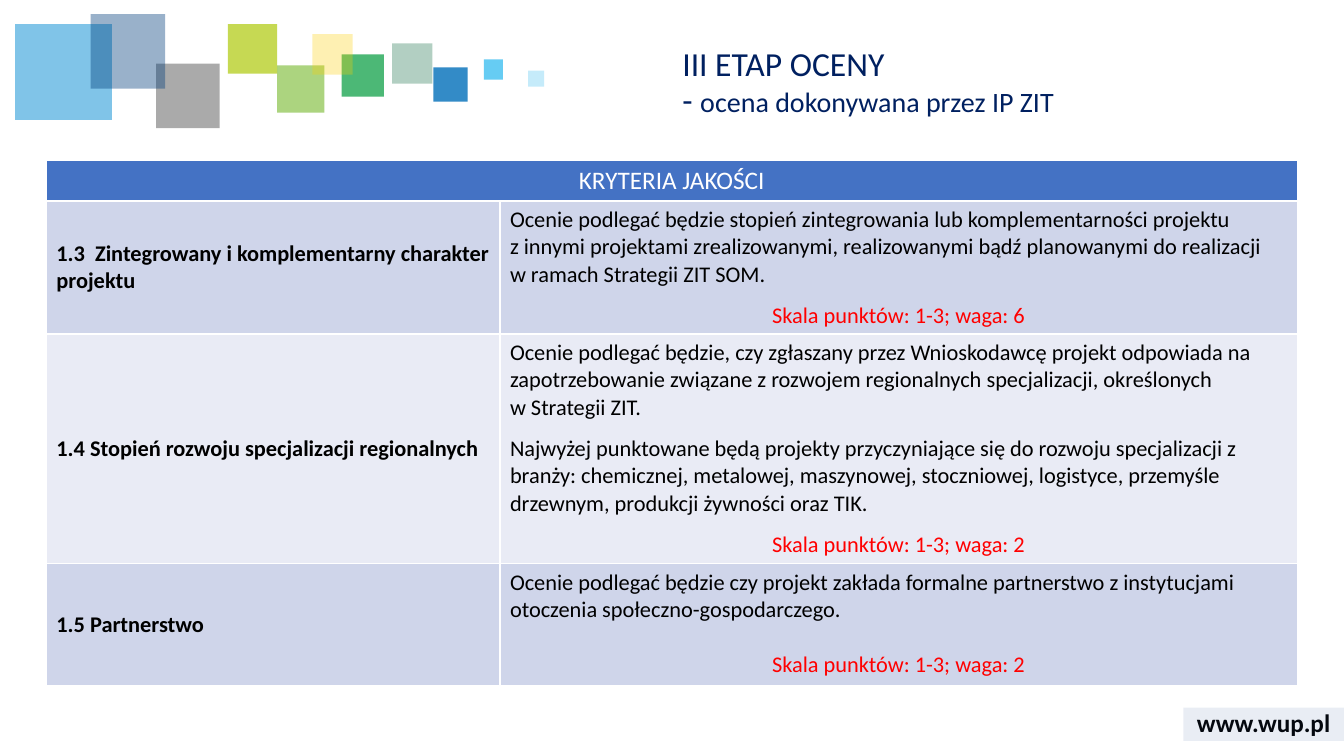
"""Build the slide with the quality criteria of the third assessment stage."""
from lxml import etree
from pptx import Presentation
from pptx.dml.color import RGBColor
from pptx.enum.shapes import MSO_SHAPE
from pptx.enum.text import MSO_ANCHOR as ANCHOR, MSO_AUTO_SIZE as AUTO, PP_ALIGN as ALIGN
from pptx.oxml.ns import qn
from pptx.util import Pt

FONT = "Calibri"
TITLE = [("III ETAP OCENY", 24), ("- ", 24), ("ocena dokonywana przez IP ZIT", 20)]
SITE = "www.wup.pl"
HEADER = "KRYTERIA JAKOŚCI"

# left, top, width, height, colour, opacity in percent
SQUARES = [
    (280.1, 31, 28.8, 28.8, "006138", 30),
    (309.6, 48.2, 24.5, 24.5, "006EB9", 80),
    (244.1, 38.9, 30.2, 30.2, "009A3C", 70),
    (10.8, 17.3, 69.1, 68.4, "028BD3", 50),
    (198, 46.8, 33.8, 33.8, "75B82A", 60),
    (111.6, 45.4, 45.4, 46.1, "575757", 50),
    (64.8, 10.1, 53.3, 53.3, "003D7C", 40),
    (345.6, 42.5, 13.7, 14.4, "40C0F1", 80),
    (162.7, 17.3, 35.3, 35.3, "AFCA0B", 70),
    (223.2, 24.5, 28.8, 28.8, "FED000", 30),
    (377.3, 50.4, 11.5, 11.5, "40C0F1", 30),
]
SITE_BAND = (845.3, 505.4, 114.7, 23.8, "2F5597", 10)

# name, description blocks of lines, score, gap before score, alignment, row height, fill
CRITERIA = [
    ("1.3  Zintegrowany i komplementarny charakter projektu",
     [["Ocenie podlegać będzie stopień zintegrowania lub komplementarności projektu",
       "z innymi projektami zrealizowanymi, realizowanymi bądź planowanymi do realizacji",
       "w ramach Strategii ZIT SOM."]],
     "Skala punktów: 1-3; waga: 6", 9.8, ALIGN.JUSTIFY, 95, "CFD5EA"),
    ("1.4 Stopień rozwoju specjalizacji regionalnych",
     [["Ocenie podlegać będzie, czy zgłaszany przez Wnioskodawcę projekt odpowiada na",
       "zapotrzebowanie związane z rozwojem regionalnych specjalizacji, określonych",
       "w Strategii ZIT."],
      ["Najwyżej punktowane będą projekty przyczyniające się do rozwoju specjalizacji "
       "z branży: chemicznej, metalowej, maszynowej, stoczniowej, logistyce, przemyśle "
       "drzewnym, produkcji żywności oraz TIK."]],
     "Skala punktów: 1-3; waga: 2", 9.8, ALIGN.LEFT, 164, "E9EBF5"),
    ("1.5 Partnerstwo",
     [["Ocenie podlegać będzie czy projekt zakłada formalne partnerstwo z instytucjami",
       "otoczenia społeczno-gospodarczego."]],
     "Skala punktów: 1-3; waga: 2", 19.5, ALIGN.LEFT, 87.2, "CFD5EA"),
]
COLUMNS = (324, 569.5)
HEADER_HEIGHT = 28.8
BLOCK_GAP = 9.8


def rgb(color):
    return RGBColor.from_string(color)


def style(p, size, color, align=ALIGN.LEFT, bold=False, before=0):
    p.alignment = align
    p.space_before = Pt(before)
    p.font.name = FONT
    p.font.size = Pt(size)
    p.font.bold = bold
    p.font.color.rgb = rgb(color)


def add_rect(s, left, top, width, height, color, opacity):
    sp = s.shapes.add_shape(MSO_SHAPE.RECTANGLE, Pt(left), Pt(top), Pt(width), Pt(height))
    sp.shadow.inherit = False
    sp.line.fill.background()
    sp.fill.solid()
    sp.fill.fore_color.rgb = rgb(color)
    clr = sp.fill._xPr.find(qn("a:solidFill"))[0]
    etree.SubElement(clr, qn("a:alpha"), val=str(opacity * 1000))


def fill_cell(cell, color, paragraphs, anchor=ANCHOR.TOP):
    cell.fill.solid()
    cell.fill.fore_color.rgb = rgb(color)
    cell.vertical_anchor = anchor
    tf = cell.text_frame
    for i, (text, *look) in enumerate(paragraphs):
        p = tf.add_paragraph() if i else tf.paragraphs[0]
        p.text = text
        style(p, *look)


def description(blocks, score, gap, align):
    for b, lines in enumerate(blocks):
        for i, line in enumerate(lines):
            yield line, 16, "000000", align, False, BLOCK_GAP if b and not i else 0
    yield score, 16, "FF0000", ALIGN.CENTER, False, gap


def add_site(s):
    sp = s.shapes.add_textbox(Pt(845.3), Pt(501.8), Pt(114.7), Pt(28.8))
    tf = sp.text_frame
    tf.word_wrap = True
    tf.vertical_anchor = ANCHOR.MIDDLE
    p = tf.paragraphs[0]
    p.text = SITE
    style(p, 18, "000000", ALIGN.CENTER, True)


def add_title(s):
    sp = s.shapes.title
    sp.left, sp.top, sp.width, sp.height = Pt(480.2), Pt(30.2), Pt(457.9), Pt(39.6)
    tf = sp.text_frame
    tf.word_wrap = True
    tf.auto_size = AUTO.NONE
    tf.vertical_anchor = ANCHOR.TOP
    p = tf.paragraphs[0]
    style(p, 24, "002060")
    p.line_spacing = 0.9
    for i, (text, size) in enumerate(TITLE):
        if i == 1:
            p.add_line_break()
        r = p.add_run()
        r.text = text
        r.font.size = Pt(size)


def add_criteria(s):
    heights = [HEADER_HEIGHT] + [c[5] for c in CRITERIA]
    table = s.shapes.add_table(len(heights), len(COLUMNS), Pt(33.1), Pt(114.8),
                               Pt(sum(COLUMNS)), Pt(sum(heights))).table
    for column, width in zip(table.columns, COLUMNS):
        column.width = Pt(width)
    for row, height in zip(table.rows, heights):
        row.height = Pt(height)
    table.cell(0, 0).merge(table.cell(0, 1))
    fill_cell(table.cell(0, 0), "4472C4", [(HEADER, 18, "FFFFFF", ALIGN.CENTER)])
    for i, (name, blocks, score, gap, align, _, color) in enumerate(CRITERIA, 1):
        fill_cell(table.cell(i, 0), color, [(name, 16, "000000", ALIGN.LEFT, True)], ANCHOR.MIDDLE)
        fill_cell(table.cell(i, 1), color, description(blocks, score, gap, align))


def main():
    prs = Presentation()
    prs.slide_width, prs.slide_height = Pt(960), Pt(540)
    s = prs.slides.add_slide(prs.slide_layouts[5])
    add_site(s)
    for rect in SQUARES + [SITE_BAND]:
        add_rect(s, *rect)
    add_criteria(s)
    add_title(s)
    prs.save("out.pptx")


if __name__ == "__main__":
    main()
